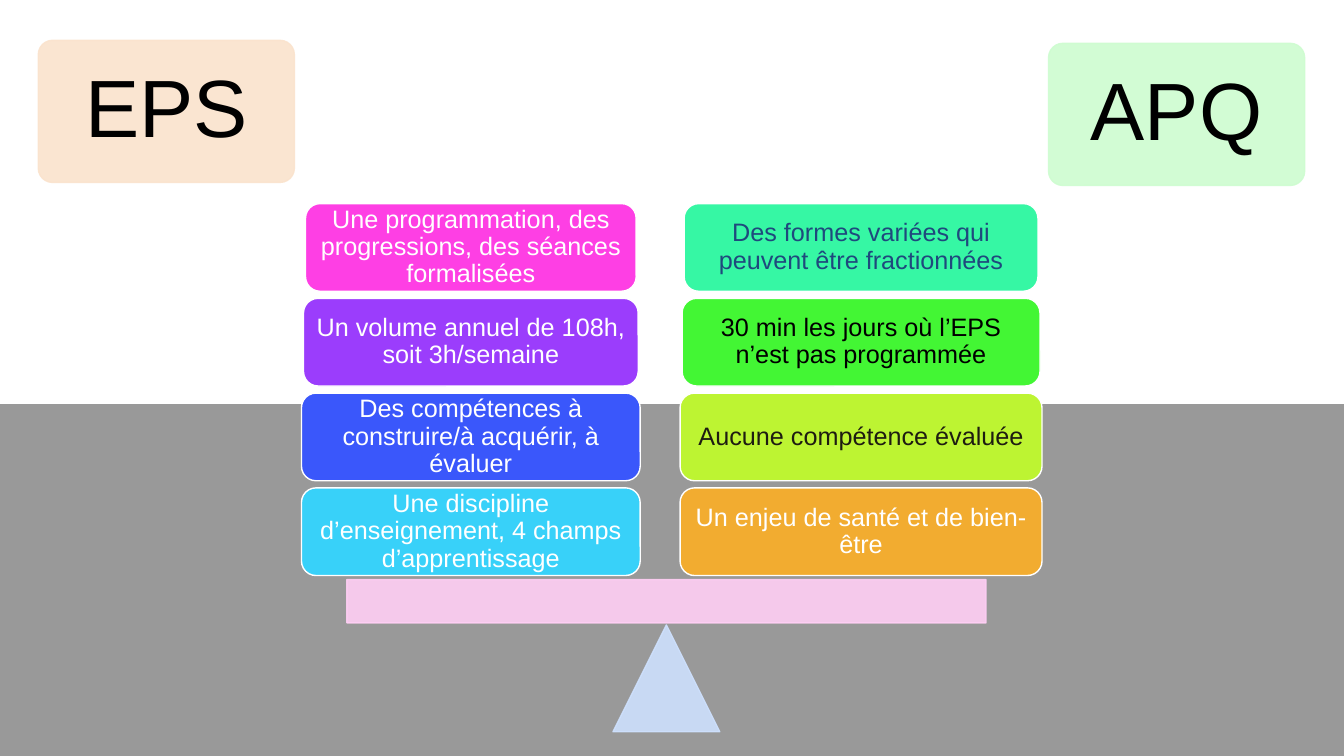
"""Build a slide that weighs EPS against APQ on a pair of scales."""
from dataclasses import dataclass

from lxml import etree
from pptx import Presentation
from pptx.dml.color import RGBColor
from pptx.enum.shapes import MSO_SHAPE
from pptx.enum.text import MSO_ANCHOR, PP_ALIGN
from pptx.oxml.ns import qn
from pptx.shapes.autoshape import Shape
from pptx.slide import Slide
from pptx.util import Inches, Pt

RECTANGLE = MSO_SHAPE.RECTANGLE
ROUNDED = MSO_SHAPE.ROUNDED_RECTANGLE
TRIANGLE = MSO_SHAPE.ISOSCELES_TRIANGLE
MIDDLE = MSO_ANCHOR.MIDDLE
CENTER = PP_ALIGN.CENTER

BLACK = RGBColor(0x00, 0x00, 0x00)
WHITE = RGBColor(0xFF, 0xFF, 0xFF)
PEACH = RGBColor(0xFA, 0xE3, 0xCD)
MINT = RGBColor(0xCE, 0xFC, 0xD0)
PALE_BLUE = RGBColor(0xCE, 0xE0, 0xFD)
PALE_PINK = RGBColor(0xFF, 0xCF, 0xF5)
MAGENTA = RGBColor(0xFE, 0x3F, 0xE4)
VIOLET = RGBColor(0x9B, 0x3D, 0xFC)
BLUE = RGBColor(0x3A, 0x57, 0xFB)
CYAN = RGBColor(0x38, 0xD1, 0xF9)
TURQUOISE = RGBColor(0x36, 0xF7, 0xA4)
GREEN = RGBColor(0x43, 0xF6, 0x34)
LIME = RGBColor(0xBD, 0xF4, 0x32)
ORANGE = RGBColor(0xF2, 0xAC, 0x30)
NAVY = RGBColor(0x1F, 0x49, 0x7D)
DARK = RGBColor(0x1E, 0x1C, 0x11)

SLIDE_WIDTH, SLIDE_HEIGHT = 13.33, 7.5
FLOOR_TOP = 4.01
FIRST_ROW, ROW_PITCH, WEIGHT_HEIGHT = 2.02, 0.94, 0.87
ROW_WIDENING, WIDEST_ROW = 0.04, 2


@dataclass(frozen=True)
class Box:
    """Place on the slide, in inches."""

    left: float
    top: float
    width: float
    height: float


@dataclass(frozen=True)
class Weight:
    """One argument stacked on the scales."""

    wording: str
    fill: RGBColor
    ink: RGBColor = WHITE


@dataclass(frozen=True)
class Side:
    """A heading and its stack of weights, from top to bottom."""

    heading: str
    heading_box: Box
    tint: RGBColor
    center: float
    top_width: float
    weights: tuple[Weight, ...]


SIDES = (
    Side("EPS", Box(0.38, 0.4, 2.54, 1.41), PEACH, 4.67, 3.28, (
        Weight("Une programmation, des progressions, des séances formalisées", MAGENTA),
        Weight("Un volume annuel de 108h, soit 3h/semaine", VIOLET),
        Weight("Des compétences à construire/à acquérir, à évaluer", BLUE),
        Weight("Une discipline d’enseignement, 4 champs d’apprentissage", CYAN),
    )),
    Side("APQ", Box(10.4, 0.43, 2.54, 1.41), MINT, 8.54, 3.51, (
        Weight("Des formes variées qui peuvent être fractionnées", TURQUOISE, NAVY),
        Weight("30 min les jours où l’EPS n’est pas programmée", GREEN, BLACK),
        Weight("Aucune compétence évaluée", LIME, DARK),
        Weight("Un enjeu de santé et de bien-être", ORANGE),
    )),
)


def add_block(slide: Slide, outline: MSO_SHAPE, box: Box, fill: RGBColor,
              line: RGBColor | None = None, opacity: int = 100) -> Shape:
    """Draw a filled shape whose fill and line share one opacity."""
    block = slide.shapes.add_shape(
        outline, Inches(box.left), Inches(box.top), Inches(box.width), Inches(box.height))
    block.shadow.inherit = False
    block.fill.solid()
    block.fill.fore_color.rgb = fill
    if line is None:
        block.line.fill.background()
    else:
        block.line.color.rgb = line
        block.line.width = Pt(1)
    if opacity < 100:
        for color in block.element.spPr.iter(qn("a:srgbClr")):
            etree.SubElement(color, qn("a:alpha")).set("val", str(opacity * 1000))
    return block


def write(block: Shape, wording: str, size: int, ink: RGBColor, inset: float) -> None:
    """Put centred Arial text in a block."""
    frame = block.text_frame
    frame.text = wording
    frame.word_wrap = True
    frame.vertical_anchor = MIDDLE
    frame.margin_left = frame.margin_right = Inches(inset)
    frame.margin_top = frame.margin_bottom = Inches(inset)
    paragraph = frame.paragraphs[0]
    paragraph.alignment = CENTER
    paragraph.line_spacing = 0.9
    font = paragraph.runs[0].font
    font.name = "Arial"
    font.size = Pt(size)
    font.color.rgb = ink


def add_side(slide: Slide, side: Side) -> None:
    """Draw the heading and the stack of one side."""
    heading = add_block(slide, ROUNDED, side.heading_box, side.tint, side.tint, 90)
    heading.adjustments[0] = 0.1
    write(heading, side.heading, 58, BLACK, 0.24)
    for row, weight in enumerate(side.weights):
        width = side.top_width + ROW_WIDENING * min(row, WIDEST_ROW)
        box = Box(side.center - width / 2, FIRST_ROW + row * ROW_PITCH, width, WEIGHT_HEIGHT)
        block = add_block(slide, ROUNDED, box, weight.fill, WHITE)
        write(block, weight.wording, 18, weight.ink, 0.07)


def main() -> None:
    """Build and save the slide."""
    deck = Presentation()
    deck.slide_width, deck.slide_height = Inches(SLIDE_WIDTH), Inches(SLIDE_HEIGHT)
    slide = deck.slides.add_slide(deck.slide_layouts[6])
    floor = Box(0, FLOOR_TOP, SLIDE_WIDTH, SLIDE_HEIGHT - FLOOR_TOP)
    add_block(slide, RECTANGLE, floor, BLACK, opacity=40)
    add_block(slide, TRIANGLE, Box(6.08, 6.2, 1.06, 1.06), PALE_BLUE, PALE_BLUE, 90)
    add_block(slide, RECTANGLE, Box(3.44, 5.75, 6.34, 0.43), PALE_PINK, PALE_PINK, 90)
    for side in SIDES:
        add_side(slide, side)
    deck.save("out.pptx")


if __name__ == "__main__":
    main()
